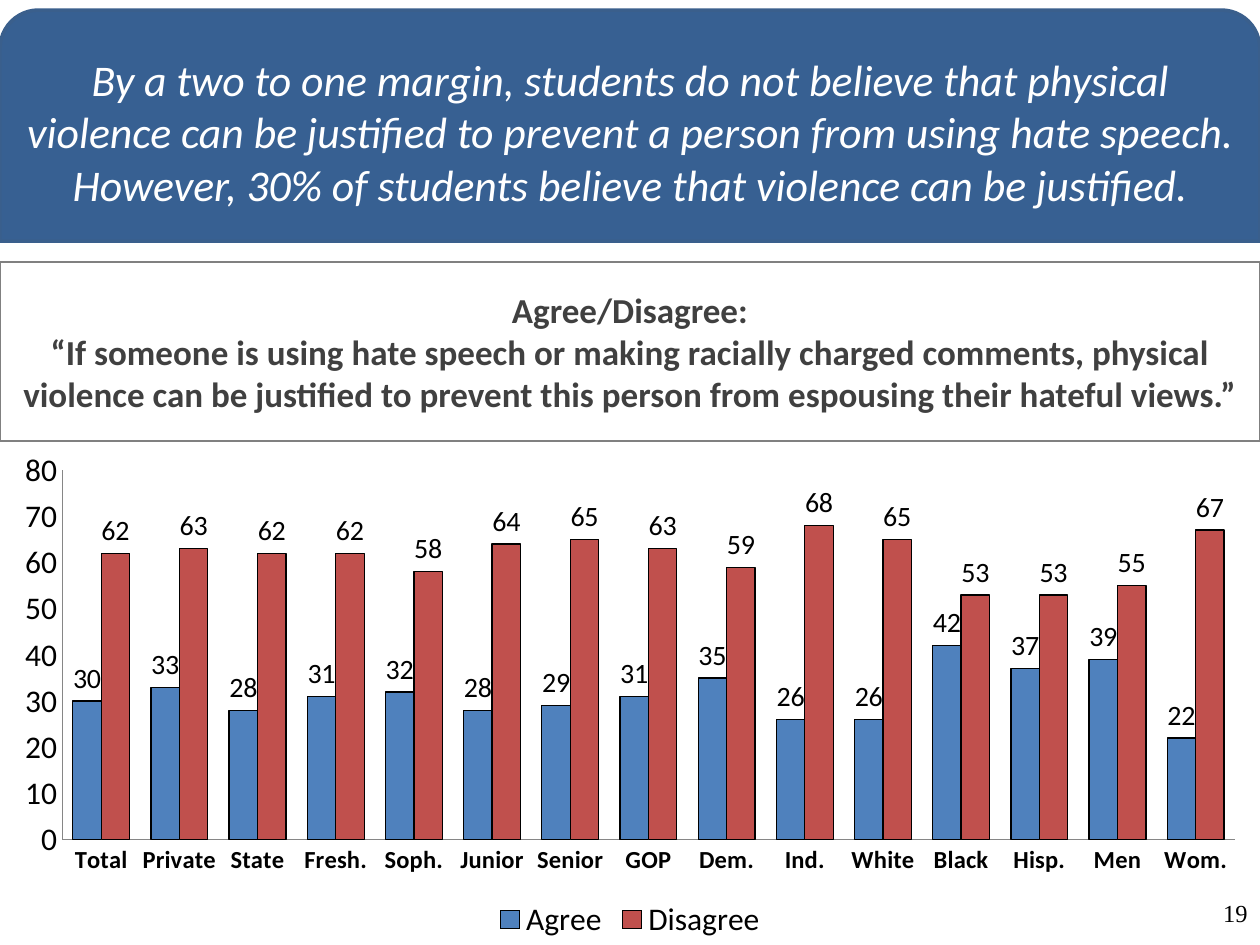
from dataclasses import dataclass

from pptx import Presentation
from pptx.chart.data import CategoryChartData
from pptx.dml.color import RGBColor
from pptx.enum.chart import XL_CHART_TYPE, XL_LABEL_POSITION, XL_LEGEND_POSITION, XL_TICK_MARK
from pptx.enum.shapes import MSO_SHAPE
from pptx.enum.text import MSO_ANCHOR, PP_ALIGN
from pptx.util import Emu, Pt

COLUMNS = XL_CHART_TYPE.COLUMN_CLUSTERED
OUTSIDE_END = XL_LABEL_POSITION.OUTSIDE_END
LEGEND_BOTTOM = XL_LEGEND_POSITION.BOTTOM
NO_TICK = XL_TICK_MARK.NONE
RECTANGLE = MSO_SHAPE.RECTANGLE
ROUNDED_TOP = MSO_SHAPE.ROUND_2_SAME_RECTANGLE
MIDDLE, BOTTOM = MSO_ANCHOR.MIDDLE, MSO_ANCHOR.BOTTOM
CENTER, RIGHT = PP_ALIGN.CENTER, PP_ALIGN.RIGHT

PX_PER_INCH = 126
SLIDE_WIDTH, SLIDE_HEIGHT = 1260, 945

HEADLINE = (
    "By a two to one margin, students do not believe that physical violence can be "
    "justified to prevent a person from using hate speech. However, 30% of students "
    "believe that violence can be justified."
)
QUESTION = (
    "Agree/Disagree:\v“If someone is using hate speech or making racially charged "
    "comments, physical violence can be justified to prevent this person from "
    "espousing their hateful views.”"
)
GROUPS = ["Total", "Private", "State", "Fresh.", "Soph.", "Junior", "Senior", "GOP",
          "Dem.", "Ind.", "White", "Black", "Hisp.", "Men", "Wom."]
ANSWERS = {
    "Agree": [30, 33, 28, 31, 32, 28, 29, 31, 35, 26, 26, 42, 37, 39, 22],
    "Disagree": [62, 63, 62, 62, 58, 64, 65, 63, 59, 68, 65, 53, 53, 55, 67],
}


@dataclass(frozen=True)
class Theme:
    font: str = "Calibri"
    number_font: str = "Times New Roman"
    banner: str = "376092"
    banner_line: str = "3A5F8C"
    white: str = "FFFFFF"
    black: str = "000000"
    question: str = "404040"
    frame: str = "808080"
    axis: str = "868686"
    series: tuple = ("4F81BD", "C0504D")
    headline_size: int = 25
    question_size: int = 20
    chart_size: int = 18
    label_size: int = 16
    small_size: int = 14


def px(length):
    return Emu(round(length * 914400 / PX_PER_INCH))


def set_font(font, name, size, color, bold=False, italic=False):
    font.name, font.size = name, Pt(size)
    font.bold, font.italic = bold, italic
    font.color.rgb = RGBColor.from_string(color)


def set_line(line, color, width=0.75):
    line.color.rgb = RGBColor.from_string(color)
    line.width = Pt(width)


class SlideBuilder:
    def __init__(self, slide, theme):
        self.slide = slide
        self.theme = theme

    def set_text(self, shape, text, anchor, alignment, **font):
        frame = shape.text_frame
        frame.word_wrap = True
        frame.vertical_anchor = anchor
        frame.text = text
        paragraph = frame.paragraphs[0]
        paragraph.alignment = alignment
        set_font(paragraph.font, **font)

    def panel(self, kind, box, text, fill, line, line_width, **font):
        shape = self.slide.shapes.add_shape(kind, *map(px, box))
        shape.shadow.inherit = False
        if fill:
            shape.fill.solid()
            shape.fill.fore_color.rgb = RGBColor.from_string(fill)
        else:
            shape.fill.background()
        set_line(shape.line, line, line_width)
        self.set_text(shape, text, MIDDLE, CENTER, name=self.theme.font, **font)

    def page_number(self, box, text):
        theme = self.theme
        shape = self.slide.shapes.add_textbox(*map(px, box))
        self.set_text(shape, text, BOTTOM, RIGHT, name=theme.number_font,
                      size=theme.small_size, color=theme.black)

    def style_axis(self, axis, size, bold=False):
        theme = self.theme
        axis.has_major_gridlines = False
        axis.major_tick_mark = axis.minor_tick_mark = NO_TICK
        set_line(axis.format.line, theme.axis)
        set_font(axis.tick_labels.font, theme.font, size, theme.black, bold)

    def column_chart(self, box, categories, answers):
        theme = self.theme
        data = CategoryChartData()
        data.categories = categories
        for name, values in answers.items():
            data.add_series(name, values)
        chart = self.slide.shapes.add_chart(COLUMNS, *map(px, box), data).chart
        set_font(chart.font, theme.font, theme.chart_size, theme.black)
        chart.has_title = False
        chart.has_legend = True
        chart.legend.position = LEGEND_BOTTOM
        chart.legend.include_in_layout = False
        set_font(chart.legend.font, theme.font, theme.chart_size, theme.black)

        self.style_axis(chart.category_axis, theme.small_size, bold=True)
        self.style_axis(chart.value_axis, theme.chart_size)
        chart.value_axis.minimum_scale = 0
        chart.value_axis.maximum_scale = 80
        chart.value_axis.major_unit = 10

        plot = chart.plots[0]
        plot.gap_width = 75
        plot.overlap = 0
        plot.vary_by_categories = False
        for series, color in zip(plot.series, theme.series):
            series.format.fill.solid()
            series.format.fill.fore_color.rgb = RGBColor.from_string(color)
            set_line(series.format.line, theme.black)
            labels = series.data_labels
            labels.show_value = True
            labels.position = OUTSIDE_END
            set_font(labels.font, theme.font, theme.label_size, theme.black)


def main():
    presentation = Presentation()
    presentation.slide_width = px(SLIDE_WIDTH)
    presentation.slide_height = px(SLIDE_HEIGHT)
    slide = presentation.slides.add_slide(presentation.slide_layouts[6])
    theme = Theme()
    builder = SlideBuilder(slide, theme)

    builder.panel(RECTANGLE, (0, 262, SLIDE_WIDTH, 179), QUESTION, None, theme.frame, 0.75,
                  size=theme.question_size, color=theme.question, bold=True)
    builder.panel(ROUNDED_TOP, (0, 10, SLIDE_WIDTH, 231), HEADLINE, theme.banner,
                  theme.banner_line, 2, size=theme.headline_size, color=theme.white,
                  italic=True)
    builder.column_chart((0, 441, SLIDE_WIDTH, 504), GROUPS, ANSWERS)
    builder.page_number((1201, 861, 59, 73), "19")
    presentation.save("out.pptx")


if __name__ == "__main__":
    main()
